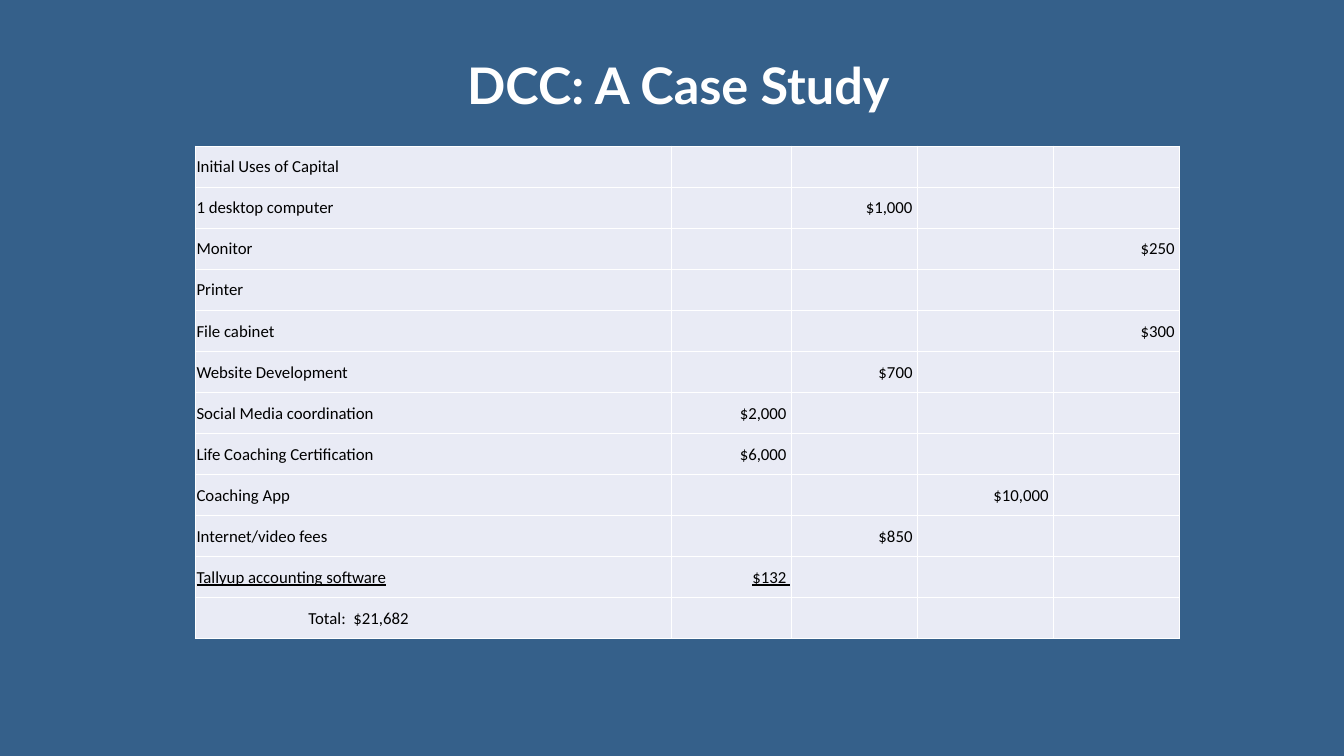
import lxml.etree
import pptx
import pptx.dml.color
import pptx.enum.text
import pptx.oxml.ns
import pptx.util

ALIGN = pptx.enum.text.PP_ALIGN
MIDDLE = pptx.enum.text.MSO_ANCHOR.MIDDLE

# Item, then the index of the amount's column and the amount, where there is one
USES = [
    ("Initial Uses of Capital", None, ""),
    ("1 desktop computer", 2, "$1,000 "),
    ("Monitor", 4, "$250 "),
    ("Printer", None, ""),
    ("File cabinet", 4, "$300 "),
    ("Website Development", 2, "$700 "),
    ("Social Media coordination", 1, "$2,000 "),
    ("Life Coaching Certification", 1, "$6,000 "),
    ("Coaching App", 3, "$10,000 "),
    ("Internet/video fees", 2, "$850 "),
    ("Tallyup accounting software", 1, "$132 "),
    ("Total:  $21,682", None, ""),
]
COLUMN_SHARES = [35.4, 8.93, 9.38, 10.13, 9.38]
ROW_SHARE = 5.43


def rgb(hex_color):
    return pptx.dml.color.RGBColor.from_string(hex_color)


class CaseStudySlide:
    """Holds the style and the slide; lengths are percent of the slide's size."""

    background = "35608A"
    white = "FFFFFF"
    black = "000000"
    cell_fill = "E9EBF5"
    title_font = "Lato"
    table_font = "Calibri"

    def __init__(self, deck):
        self.deck = deck
        self.slide = deck.slides.add_slide(deck.slide_layouts[5])
        fill = self.slide.background.fill
        fill.solid()
        fill.fore_color.rgb = rgb(self.background)

    def across(self, share):
        return round(self.deck.slide_width * share / 100)

    def down(self, share):
        return round(self.deck.slide_height * share / 100)

    def format_paragraph(self, paragraph, font, size, color, align):
        paragraph.alignment = align
        paragraph.font.name = font
        paragraph.font.size = pptx.util.Pt(size)
        paragraph.font.color.rgb = rgb(color)

    def title(self, text, left, top, width, height):
        title = self.slide.shapes.title
        title.left, title.top = self.across(left), self.down(top)
        title.width, title.height = self.across(width), self.down(height)
        title.text_frame.text = text
        title.text_frame.word_wrap = True
        title.text_frame.vertical_anchor = MIDDLE
        heading = title.text_frame.paragraphs[0]
        self.format_paragraph(heading, self.title_font, 36, self.white, ALIGN.CENTER)
        heading.font.bold = True
        heading.line_spacing = 0.9

    def table(self, left, top, column_shares, row_share, row_count):
        table = self.slide.shapes.add_table(
            row_count, len(column_shares), self.across(left), self.down(top),
            self.across(sum(column_shares)), self.down(row_share * row_count)).table
        table.first_row = table.horz_banding = False
        for column, share in zip(table.columns, column_shares):
            column.width = self.across(share)
        for row in table.rows:
            row.height = self.down(row_share)
        for cell in table.iter_cells():
            self.cell(cell)
        return table

    def cell(self, cell):
        cell.vertical_anchor = MIDDLE
        cell.margin_left = cell.margin_right = cell.margin_top = pptx.util.Inches(0.01)
        cell.margin_bottom = 0
        self.borders(cell)
        cell.fill.solid()
        cell.fill.fore_color.rgb = rgb(self.cell_fill)

    def borders(self, cell):
        qn = pptx.oxml.ns.qn
        properties = cell._tc.get_or_add_tcPr()
        for side in ("a:lnL", "a:lnR", "a:lnT", "a:lnB"):
            line = lxml.etree.SubElement(properties, qn(side), w=str(pptx.util.Pt(1)))
            fill = lxml.etree.SubElement(line, qn("a:solidFill"))
            lxml.etree.SubElement(fill, qn("a:srgbClr"), val=self.white)

    def cell_text(self, cell, text, align=ALIGN.LEFT, underline=False):
        cell.text = text
        paragraph = cell.text_frame.paragraphs[0]
        self.format_paragraph(paragraph, self.table_font, 12, self.black, align)
        paragraph.font.underline = underline


def main():
    deck = pptx.Presentation()
    deck.slide_width = pptx.util.Inches(13.33)
    deck.slide_height = pptx.util.Inches(7.5)

    page = CaseStudySlide(deck)
    page.title(" DCC: A Case Study", 6.9, 6.67, 86.25, 10)

    capital = page.table(14.55, 19.33, COLUMN_SHARES, ROW_SHARE, len(USES))
    last_expense = len(USES) - 2
    for row, (item, amount_column, amount) in enumerate(USES):
        underline = row == last_expense
        page.cell_text(capital.cell(row, 0), item, underline=underline)
        if amount:
            page.cell_text(capital.cell(row, amount_column), amount,
                           ALIGN.RIGHT, underline)
    capital.cell(len(USES) - 1, 0).margin_left = pptx.util.Inches(1.12)

    deck.save("out.pptx")


if __name__ == "__main__":
    main()
